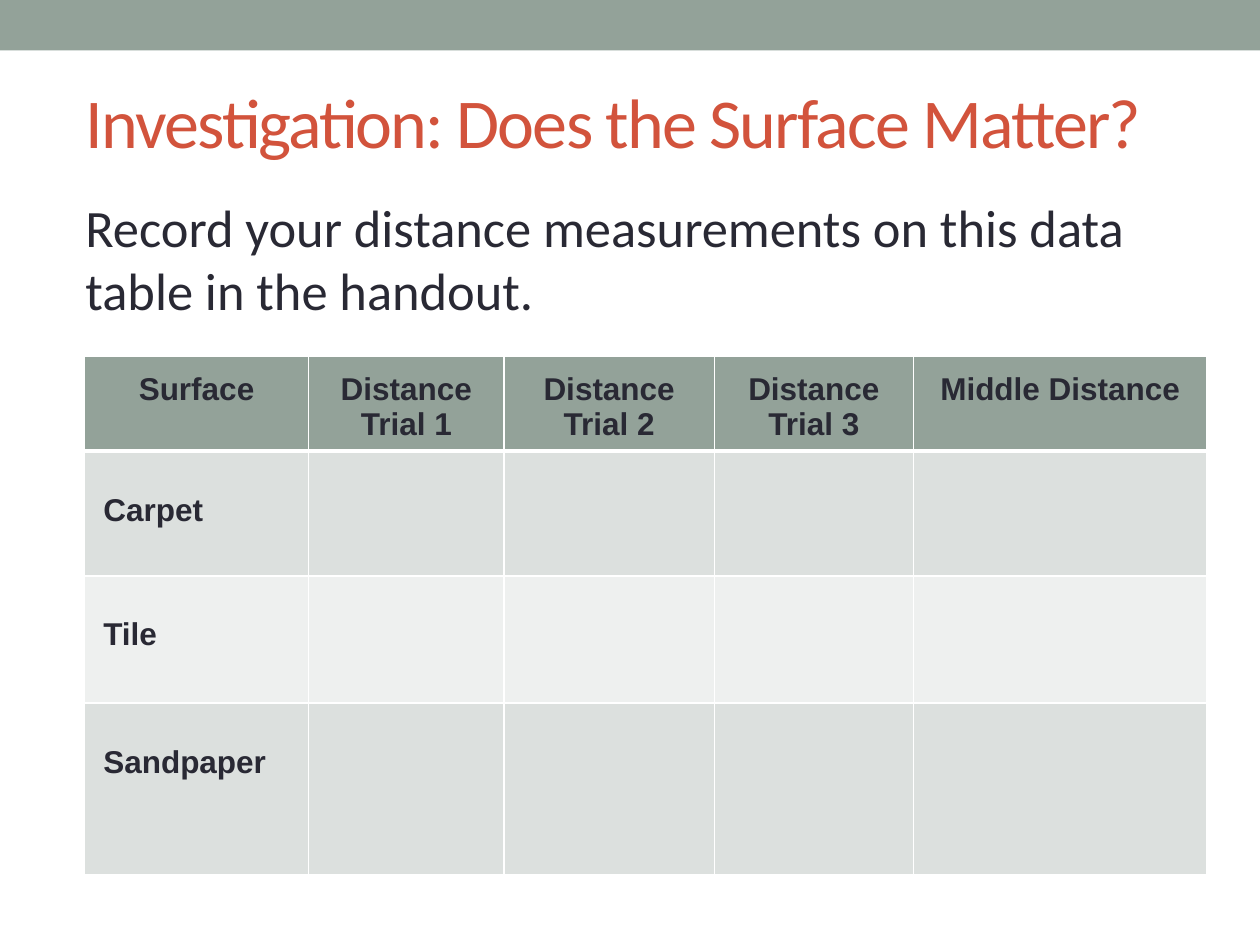
from dataclasses import dataclass

from lxml.etree import SubElement
from pptx import Presentation
from pptx.dml.color import RGBColor
from pptx.enum.shapes import MSO_SHAPE
from pptx.enum.text import MSO_ANCHOR, PP_ALIGN
from pptx.oxml.ns import qn
from pptx.table import _Cell
from pptx.text.text import _Run
from pptx.util import Inches, Pt

SAGE = RGBColor(0x93, 0xA2, 0x99)
RUST = RGBColor(0xD2, 0x53, 0x3C)
INK = RGBColor(0x29, 0x29, 0x34)
WHITE = RGBColor(0xFF, 0xFF, 0xFF)
DARK_BAND = RGBColor(0xDC, 0xE0, 0xDE)
LIGHT_BAND = RGBColor(0xEE, 0xF0, 0xEF)


@dataclass(frozen=True)
class Column:
    heading: str
    width: float


@dataclass(frozen=True)
class SurfaceRow:
    surface: str
    height: float


COLUMNS = [
    Column("Surface", 1.78),
    *(Column(f"Distance\nTrial {trial}", width)
      for trial, width in enumerate((1.55, 1.67, 1.58), start=1)),
    Column("Middle Distance", 2.33),
]
ROWS = [SurfaceRow("Carpet", 0.99), SurfaceRow("Tile", 1.01), SurfaceRow("Sandpaper", 1.36)]
HEADER_HEIGHT = 0.75

HEADER_FORMAT = {"margin_top": Inches(0.12), "margin_bottom": Inches(0.05)}
BODY_FORMAT = {"margin_top": Inches(0.33), "margin_left": Inches(0.15)}


def format_run(run: _Run, color: RGBColor, **values) -> None:
    run.font.color.rgb = color
    for key, value in values.items():
        setattr(run.font, key, value)


def add_borders(cell: _Cell, top: float = 1, bottom: float = 1) -> None:
    """Draw white cell borders; call before filling, as the schema orders them."""
    properties = cell._tc.get_or_add_tcPr()
    for side, points in {"lnL": 1, "lnR": 1, "lnT": top, "lnB": bottom}.items():
        line = SubElement(properties, qn(f"a:{side}"), w=str(Pt(points)))
        SubElement(SubElement(line, qn("a:solidFill")), qn("a:srgbClr"), val=str(WHITE))


def fill_cell(cell: _Cell, text: str, color: RGBColor, align: PP_ALIGN, values: dict) -> None:
    cell.fill.solid()
    cell.fill.fore_color.rgb = color
    for key, value in values.items():
        setattr(cell, key, value)
    if not text:
        return
    cell.text = text
    for paragraph in cell.text_frame.paragraphs:
        paragraph.alignment = align
        for run in paragraph.runs:
            format_run(run, INK, name="Arial", size=Pt(18), bold=True)


def add_distance_table(slide) -> None:
    width = sum(column.width for column in COLUMNS)
    height = HEADER_HEIGHT + sum(row.height for row in ROWS)
    table = slide.shapes.add_table(
        len(ROWS) + 1, len(COLUMNS),
        Inches(0.67), Inches(2.83), Inches(width), Inches(height)).table

    table.rows[0].height = Inches(HEADER_HEIGHT)
    for index, column in enumerate(COLUMNS):
        table.columns[index].width = Inches(column.width)
        cell = table.cell(0, index)
        add_borders(cell, bottom=3)
        fill_cell(cell, column.heading, SAGE, PP_ALIGN.CENTER, HEADER_FORMAT)

    for number, row in enumerate(ROWS, start=1):
        table.rows[number].height = Inches(row.height)
        band = DARK_BAND if number % 2 else LIGHT_BAND
        for index in range(len(COLUMNS)):
            cell = table.cell(number, index)
            add_borders(cell, top=3 if number == 1 else 1)
            fill_cell(cell, "" if index else row.surface, band, PP_ALIGN.LEFT, BODY_FORMAT)


def add_title(slide) -> None:
    title = slide.shapes.title
    place = {"left": 0.58, "top": 0.42, "width": 8.92, "height": 1.08}
    for key, value in place.items():
        setattr(title, key, Inches(value))
    title.text_frame.text = "Investigation: Does the Surface Matter?"
    title.text_frame.vertical_anchor = MSO_ANCHOR.MIDDLE
    paragraph = title.text_frame.paragraphs[0]
    paragraph.alignment = PP_ALIGN.LEFT
    run = paragraph.runs[0]
    format_run(run, RUST, name="Calibri", size=Pt(40))
    run.font._element.set("spc", "-100")


def add_instruction(slide) -> None:
    frame = slide.shapes.add_textbox(
        Inches(0.58), Inches(1.5), Inches(8.83), Inches(1.11)).text_frame
    frame.word_wrap = True
    frame.text = "Record your distance measurements on this data table in the handout."
    format_run(frame.paragraphs[0].runs[0], INK, name="Calibri", size=Pt(30))


def main() -> None:
    presentation = Presentation()
    presentation.slide_width, presentation.slide_height = Inches(10), Inches(7.5)
    slide = presentation.slides.add_slide(presentation.slide_layouts.get_by_name("Title Only"))

    top_band = slide.shapes.add_shape(MSO_SHAPE.RECTANGLE, 0, 0, Inches(10), Inches(0.4))
    top_band.shadow.inherit = False
    top_band.fill.solid()
    top_band.fill.fore_color.rgb = SAGE
    top_band.line.fill.background()

    add_title(slide)
    add_distance_table(slide)
    add_instruction(slide)
    presentation.save("out.pptx")


if __name__ == "__main__":
    main()
